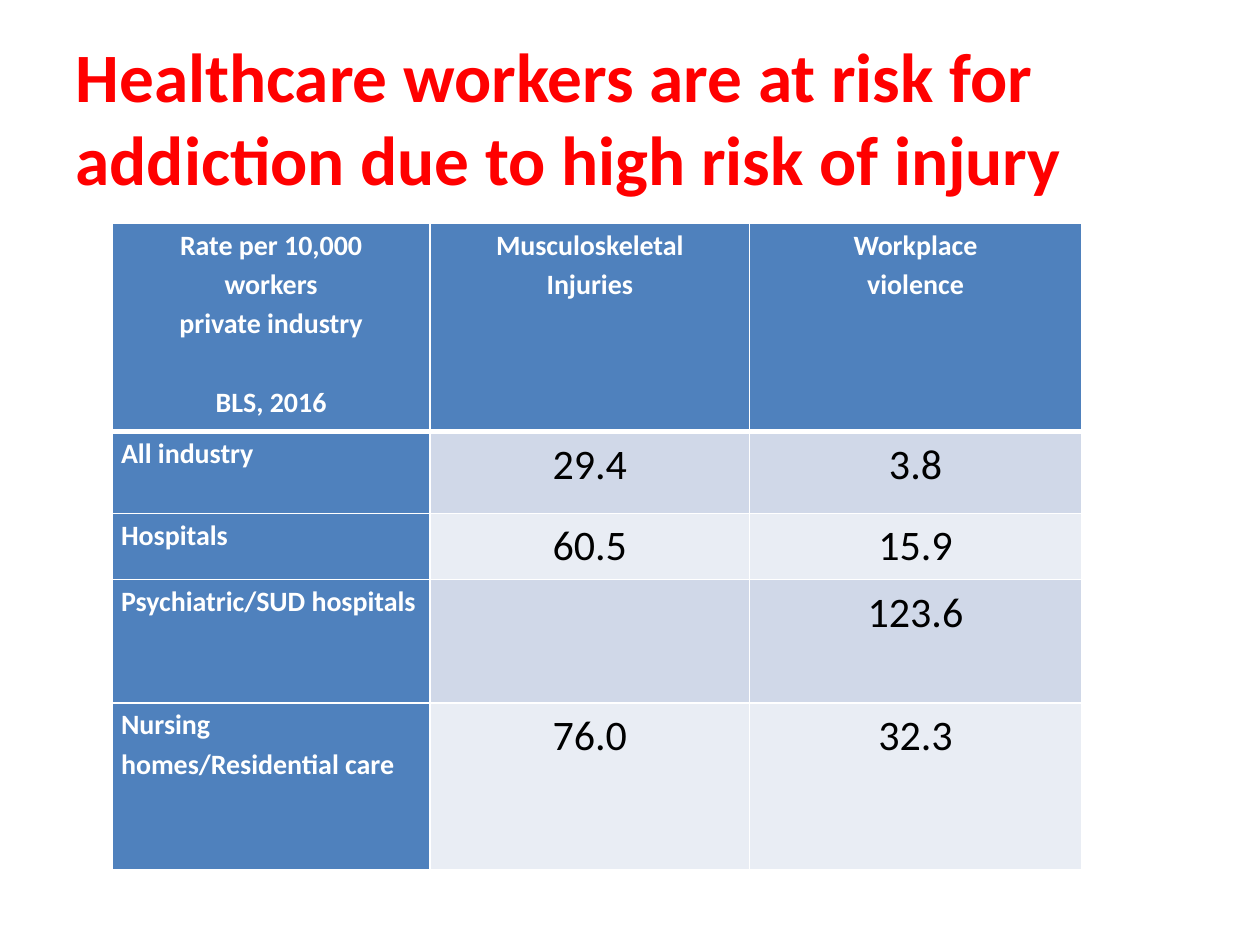
from lxml.etree import SubElement
from pptx import Presentation
from pptx.dml.color import RGBColor
from pptx.enum.text import MSO_ANCHOR, PP_ALIGN
from pptx.oxml.ns import qn
from pptx.util import Pt

RED = RGBColor(0xFF, 0x00, 0x00)
BLUE = RGBColor(0x4F, 0x81, 0xBD)
WHITE = RGBColor(0xFF, 0xFF, 0xFF)
BLACK = RGBColor(0x00, 0x00, 0x00)
BANDS = (RGBColor(0xD0, 0xD8, 0xE8), RGBColor(0xE9, 0xED, 0xF4))

TITLE = "Healthcare workers are at risk for addiction due to high risk of injury"
HEADS = (
    ("Rate per 10,000", "workers", "private industry", "BLS, 2016"),
    ("Musculoskeletal", "Injuries"),
    ("Workplace", "violence"),
)
RATES = (
    ("All industry", "29.4", "3.8"),
    ("Hospitals", "60.5", "15.9"),
    ("Psychiatric/SUD hospitals", "", "123.6"),
    ("Nursing homes/Residential care", "76.0", "32.3"),
)
COLS = (181.5, 182.75, 189.5)
ROWS = (119, 46.8, 37.8, 70.6, 95)


def put_text(frame, *lines, size=16, color=WHITE, bold=True,
             align=PP_ALIGN.CENTER, space=1.15):
    """Write each line as a paragraph in one format."""
    for i, line in enumerate(lines):
        para = frame.add_paragraph() if i else frame.paragraphs[0]
        para.alignment = align
        para.line_spacing = space
        run = para.add_run()
        run.text = line
        font = run.font
        font.name, font.size, font.bold = "Calibri", Pt(size), bold
        font.color.rgb = color


def set_edges(cell, top=1, base=1):
    """Draw white cell borders with the given top and bottom widths."""
    props = cell._tc.get_or_add_tcPr()
    for side, width in (("L", 1), ("R", 1), ("T", top), ("B", base)):
        line = SubElement(props, qn("a:ln" + side), w=str(Pt(width)))
        fill = SubElement(line, qn("a:solidFill"))
        SubElement(fill, qn("a:srgbClr"), val=str(WHITE))


def style_cell(cell, color, **edges):
    cell.margin_left = cell.margin_right = Pt(5)
    cell.margin_top = cell.margin_bottom = Pt(0)
    set_edges(cell, **edges)
    cell.fill.solid()
    cell.fill.fore_color.rgb = color


def add_title(slide, left, top, width, height):
    title = slide.shapes.title
    title.left, title.top = Pt(left), Pt(top)
    title.width, title.height = Pt(width), Pt(height)
    frame = title.text_frame
    frame.word_wrap = True
    frame.vertical_anchor = MSO_ANCHOR.MIDDLE
    put_text(frame, TITLE, size=39.6, color=RED, align=PP_ALIGN.LEFT, space=1.0)


def add_rates(slide, left, top, width, height):
    shape = slide.shapes.add_table(len(ROWS), len(COLS), Pt(left), Pt(top),
                                   Pt(width), Pt(height))
    table = shape.table
    for col, size in zip(table.columns, COLS):
        col.width = Pt(size * width / sum(COLS))
    for row, size in zip(table.rows, ROWS):
        row.height = Pt(size * height / sum(ROWS))

    # Header row, with a gap above the data source
    for c, lines in enumerate(HEADS):
        cell = table.cell(0, c)
        style_cell(cell, BLUE, base=3)
        put_text(cell.text_frame, *lines)
    table.cell(0, 0).text_frame.paragraphs[-1].space_before = Pt(22.5)

    # Industry names and banded rates
    for r, (name, *rates) in enumerate(RATES, 1):
        top_edge = 3 if r == 1 else 1
        cell = table.cell(r, 0)
        style_cell(cell, BLUE, top=top_edge)
        put_text(cell.text_frame, name, align=PP_ALIGN.LEFT)
        for c, rate in enumerate(rates, 1):
            cell = table.cell(r, c)
            style_cell(cell, BANDS[(r - 1) % 2], top=top_edge)
            if rate:
                put_text(cell.text_frame, rate, size=24, color=BLACK, bold=False)


def main():
    deck = Presentation()
    deck.slide_width, deck.slide_height = Pt(720), Pt(540)
    slide = deck.slides.add_slide(deck.slide_layouts[5])
    add_title(slide, 36, 21.6, 648, 90)
    add_rates(slide, 64.2, 127.6, sum(COLS), sum(ROWS))
    deck.save("out.pptx")


if __name__ == "__main__":
    main()
